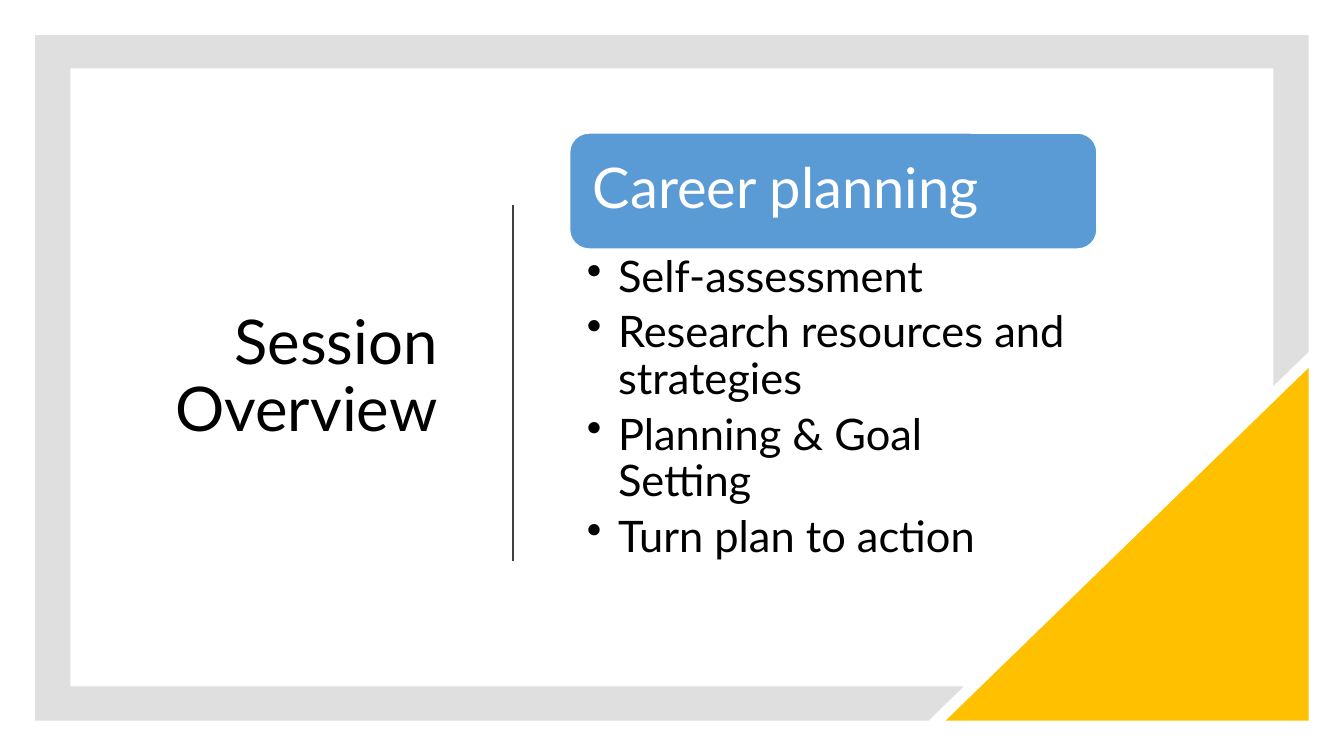
from lxml import etree
from pptx import Presentation
from pptx.dml.color import RGBColor
from pptx.enum.shapes import MSO_CONNECTOR, MSO_SHAPE
from pptx.enum.text import MSO_ANCHOR, PP_ALIGN
from pptx.oxml.ns import qn
from pptx.util import Pt

PX = 9144
FONT = "Lato"
BLACK = RGBColor(0x00, 0x00, 0x00)
WHITE = RGBColor(0xFF, 0xFF, 0xFF)
GRAY = RGBColor(0x80, 0x80, 0x80)
DARK = RGBColor(0x40, 0x40, 0x40)
BLUE = RGBColor(0x5B, 0x9B, 0xD5)
GOLD = RGBColor(0xFF, 0xC0, 0x00)
ROUNDED = MSO_SHAPE.ROUNDED_RECTANGLE
TRIANGLE = MSO_SHAPE.RIGHT_TRIANGLE
STRAIGHT = MSO_CONNECTOR.STRAIGHT
MIDDLE, TOP = MSO_ANCHOR.MIDDLE, MSO_ANCHOR.TOP
LEFT, RIGHT = PP_ALIGN.LEFT, PP_ALIGN.RIGHT

FRAME = [(35, 35), (1298, 35), (1298, 349), (1263, 383), (1263, 68), (70, 68),
         (70, 681), (956, 681), (921, 715), (35, 715)]
TOPICS = ["Self-assessment", "Research resources and strategies",
          "Planning & Goal Setting", "Turn plan to action"]


class Deck:
    def __init__(self, width, height):
        self.prs = Presentation()
        self.prs.slide_width = width * PX
        self.prs.slide_height = height * PX
        self.shapes = self.prs.slides.add_slide(self.prs.slide_layouts[6]).shapes

    def paint(self, sp, fill, line=None):
        sp.shadow.inherit = False
        sp.fill.solid()
        sp.fill.fore_color.rgb = fill
        if line is None:
            sp.line.fill.background()
        else:
            sp.line.color.rgb = line
            sp.line.width = Pt(1)

    def outline(self, points, fill, opacity):
        builder = self.shapes.build_freeform(*points[0], scale=PX)
        builder.add_line_segments(points[1:], close=True)
        sp = builder.convert_to_shape()
        self.paint(sp, fill)
        color = sp._element.spPr.find(qn("a:solidFill"))[0]
        etree.SubElement(color, qn("a:alpha"), val=str(opacity * 1000))

    def shape(self, kind, box, fill, line=None, flip=False):
        sp = self.shapes.add_shape(kind, *(v * PX for v in box))
        self.paint(sp, fill, line)
        if flip:
            sp._element.spPr.find(qn("a:xfrm")).set("flipH", "1")

    def line(self, x1, y1, x2, y2, color, width):
        cx = self.shapes.add_connector(STRAIGHT, *(v * PX for v in (x1, y1, x2, y2)))
        cx.line.color.rgb = color
        cx.line.width = Pt(width)
        etree.SubElement(cx._element.spPr, qn("a:effectLst"))

    def text(self, box, lines, size, color=BLACK, align=LEFT, anchor=MIDDLE,
             insets=(10, 5, 10, 5), indent=0, after=0):
        tf = self.shapes.add_textbox(*(v * PX for v in box)).text_frame
        tf.word_wrap = True
        tf.vertical_anchor = anchor
        tf.margin_left, tf.margin_top, tf.margin_right, tf.margin_bottom = (
            v * PX for v in insets)
        for i, line in enumerate(lines):
            p = tf.add_paragraph() if i else tf.paragraphs[0]
            if indent:
                pPr = p._p.get_or_add_pPr()
                pPr.set("marL", str(indent * PX))
                pPr.set("indent", str(-indent * PX))
                etree.SubElement(pPr, qn("a:buChar"), char="•")
            p.alignment = align
            p.line_spacing = 0.9
            p.space_after = Pt(after)
            r = p.add_run()
            r.text = line
            r.font.name = FONT
            r.font.size = Pt(size)
            r.font.color.rgb = color


def main():
    deck = Deck(1333, 750)
    deck.outline(FRAME, GRAY, 25)
    deck.shape(TRIANGLE, (938, 365, 360, 350), GOLD, flip=True)
    deck.text((110, 130, 334, 490), ["Session Overview"], 44, align=RIGHT)
    deck.line(509, 203, 509, 557, DARK, 1.5)
    deck.shape(ROUNDED, (565, 132, 523, 115), BLUE, WHITE)
    deck.text((571, 137, 512, 104), ["Career planning"], 40, WHITE,
              insets=(17, 17, 17, 17))
    deck.text((565, 247, 523, 371), TOPICS, 31, anchor=TOP,
              insets=(17, 6, 31, 6), indent=31, after=6)
    deck.prs.save("out.pptx")


if __name__ == "__main__":
    main()
